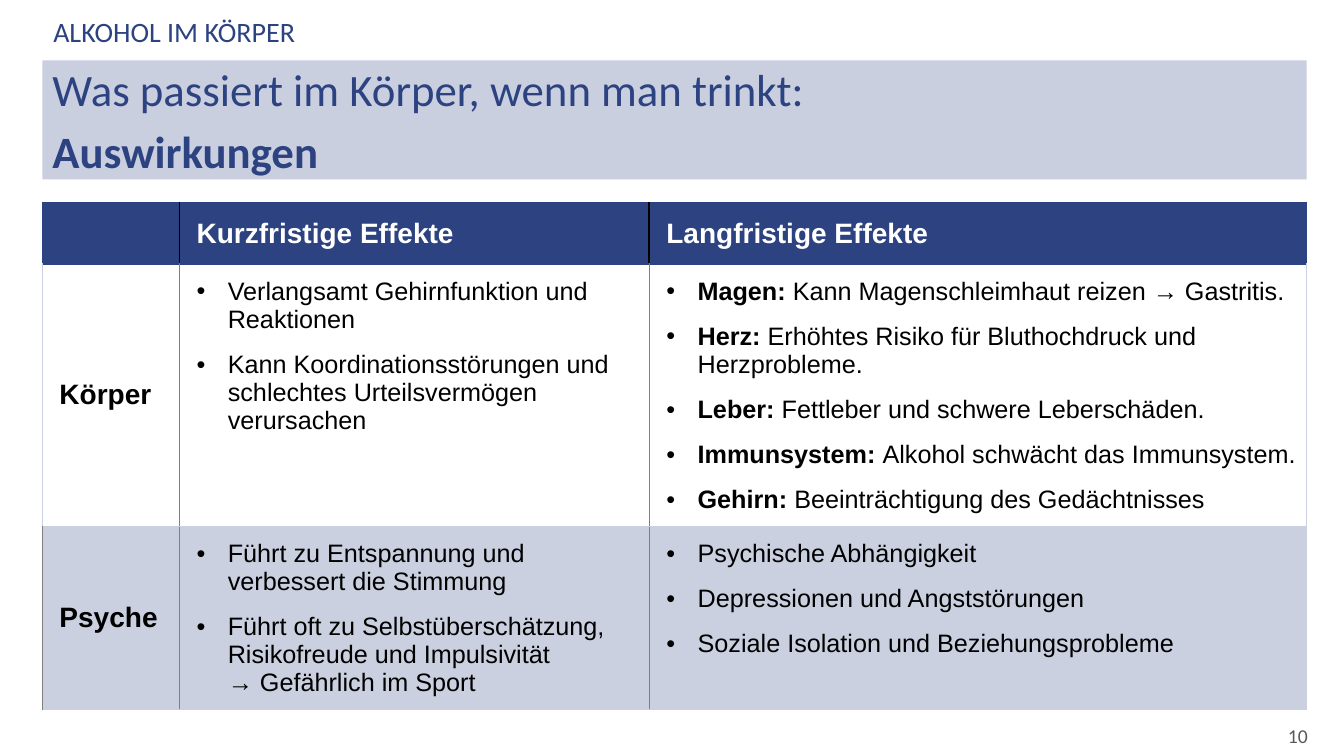
from lxml import etree
from pptx import Presentation
from pptx.dml.color import RGBColor
from pptx.enum.text import MSO_ANCHOR as Anchor, MSO_AUTO_SIZE as AutoSize, PP_ALIGN as Align
from pptx.oxml.ns import qn
from pptx.util import Inches, Pt

NAVY = RGBColor(0x2C, 0x42, 0x81)
PALE = RGBColor(0xCA, 0xD0, 0xDF)
GREY = RGBColor(0x80, 0x80, 0x80)
DARK_GREY = RGBColor(0x59, 0x59, 0x59)
WHITE = RGBColor(0xFF, 0xFF, 0xFF)
BLACK = RGBColor(0, 0, 0)
PLAIN_TABLE = "{2D5ABB26-0587-4C30-8999-92F81FD0307C}"

HEADINGS = ["", "Kurzfristige Effekte", "Langfristige Effekte"]
# Each effect is (bold lead, text)
EFFECTS = [
    ("Körper",
     [("", "Verlangsamt Gehirnfunktion und Reaktionen"),
      ("", "Kann Koordinationsstörungen und schlechtes Urteilsvermögen verursachen")],
     [("Magen: ", "Kann Magenschleimhaut reizen → Gastritis."),
      ("Herz: ", "Erhöhtes Risiko für Bluthochdruck und Herzprobleme."),
      ("Leber: ", "Fettleber und schwere Leberschäden."),
      ("Immunsystem: ", "Alkohol schwächt das Immunsystem."),
      ("Gehirn: ", "Beeinträchtigung des Gedächtnisses")]),
    ("Psyche",
     [("", "Führt zu Entspannung und verbessert die Stimmung"),
      ("", "Führt oft zu Selbstüberschätzung, Risikofreude und Impulsivität \n"
           "→ Gefährlich im Sport")],
     [("", "Psychische Abhängigkeit"),
      ("", "Depressionen und Angststörungen"),
      ("", "Soziale Isolation und Beziehungsprobleme")]),
]
COLUMN_WIDTHS = [1.36, 4.66, 6.52]
ROW_HEIGHTS = [0.61, 2.6, 1.82]


def add_run(paragraph, text, size, color, font="Calibri", bold=False):
    for index, line in enumerate(text.split("\n")):
        if index:
            paragraph.add_line_break()
        run = paragraph.add_run()
        run.text = line
        run.font.name, run.font.size, run.font.bold = font, Pt(size), bold
        run.font.color.rgb = color


def add_label(slide, box, text, size, color, align):
    label = slide.shapes.add_textbox(*map(Inches, box)).text_frame
    label.word_wrap = True
    label.vertical_anchor = Anchor.MIDDLE
    label.paragraphs[0].alignment = align
    add_run(label.paragraphs[0], text, size, color)


def add_title(slide, box):
    title = slide.shapes.title
    title.left, title.top, title.width, title.height = map(Inches, box)
    title.fill.solid()
    title.fill.fore_color.rgb = NAVY
    color = title.fill._xPr.find(qn("a:solidFill"))[0]
    etree.SubElement(color, qn("a:alpha")).set("val", "25000")
    frame = title.text_frame
    frame.word_wrap = True
    frame.auto_size = AutoSize.NONE
    frame.vertical_anchor = Anchor.MIDDLE
    frame.margin_top = frame.margin_bottom = 0
    lines = [("Was passiert im Körper, wenn man trinkt:", False), ("Auswirkungen", True)]
    for index, (text, bold) in enumerate(lines):
        paragraph = frame.add_paragraph() if index else frame.paragraphs[0]
        paragraph.alignment = Align.LEFT
        paragraph.space_after = Pt(6)
        add_run(paragraph, text, 32, NAVY, bold=bold)


def set_borders(cell, **borders):
    """Borders are side=(color, points); they go ahead of the cell's fill."""
    props = cell._tc.get_or_add_tcPr()
    sides = [side for side in "LRTB" if side in borders]
    for index, side in enumerate(sides):
        color, points = borders[side]
        line = etree.Element(qn("a:ln" + side), w=str(Pt(points)))
        fill = etree.SubElement(line, qn("a:solidFill"))
        etree.SubElement(fill, qn("a:srgbClr")).set("val", str(color))
        props.insert(index, line)


def style_cell(cell, row, column):
    is_heading = row == 0 or column == 0
    cell.margin_left, cell.margin_right = Inches(0.17), Inches(0.1)
    cell.margin_top = Inches(0.13)
    # Effect lists fill their rows, so they keep no bottom margin
    cell.margin_bottom = Inches(0.13 if is_heading else 0)
    cell.vertical_anchor = Anchor.MIDDLE if is_heading else Anchor.TOP
    cell.fill.solid()
    cell.fill.fore_color.rgb = [NAVY, WHITE, PALE][row]
    inner = (BLACK, 1.5) if row == 0 else (GREY, 0.5)
    left_edge = [(NAVY, 1), (PALE, 1), (GREY, 0.5)][row]
    right_edge = (NAVY if row == 0 else PALE, 1)
    set_borders(cell,
                L=inner if column else left_edge,
                R=inner if column < 2 else right_edge,
                T=(PALE if row == 2 else NAVY, 1),
                B=(PALE if row else NAVY, 1))


def add_effects(cell, effects):
    frame = cell.text_frame
    for index, (lead, text) in enumerate(effects):
        paragraph = frame.add_paragraph() if index else frame.paragraphs[0]
        props = paragraph._p.get_or_add_pPr()
        props.set("marL", str(Inches(0.31)))
        props.set("indent", str(-Inches(0.31)))
        etree.SubElement(props, qn("a:buFont")).set("typeface", "Arial")
        etree.SubElement(props, qn("a:buChar")).set("char", "•")
        if index < len(effects) - 1:
            paragraph.space_after = Pt(12)
        if lead:
            add_run(paragraph, lead, 18, BLACK, "Arial", True)
        add_run(paragraph, text, 18, BLACK, "Arial")


def add_effects_table(slide, box):
    frame = slide.shapes.add_table(3, 3, *map(Inches, box))
    table = frame.table
    table.first_row = table.horz_banding = False
    frame._element.find(".//" + qn("a:tableStyleId")).text = PLAIN_TABLE
    for column, width in zip(table.columns, COLUMN_WIDTHS):
        column.width = Inches(width)
    for row, height in zip(table.rows, ROW_HEIGHTS):
        row.height = Inches(height)
    for row in range(3):
        for column in range(3):
            style_cell(table.cell(row, column), row, column)

    # Header row
    for column, heading in enumerate(HEADINGS):
        if heading:
            paragraph = table.cell(0, column).text_frame.paragraphs[0]
            add_run(paragraph, heading, 20, WHITE, "Arial", True)

    # Body and mind rows
    for row, (area, short_term, long_term) in enumerate(EFFECTS, 1):
        paragraph = table.cell(row, 0).text_frame.paragraphs[0]
        add_run(paragraph, area, 20, BLACK, "Arial", True)
        add_effects(table.cell(row, 1), short_term)
        add_effects(table.cell(row, 2), long_term)


def main():
    deck = Presentation()
    deck.slide_width, deck.slide_height = Inches(13.33), Inches(7.5)
    slide = deck.slides.add_slide(deck.slide_layouts[5])
    add_title(slide, (0.42, 0.6, 12.54, 1.18))
    # Section name and page number
    add_label(slide, (0.43, 0.12, 9.01, 0.39), "ALKOHOL IM KÖRPER", 20, NAVY, Align.LEFT)
    add_label(slide, (12.1, 7.12, 0.97, 0.35), "10", 14, DARK_GREY, Align.RIGHT)
    add_effects_table(slide, (0.42, 2.01, 12.54, 5.03))
    deck.save("out.pptx")


if __name__ == "__main__":
    main()
